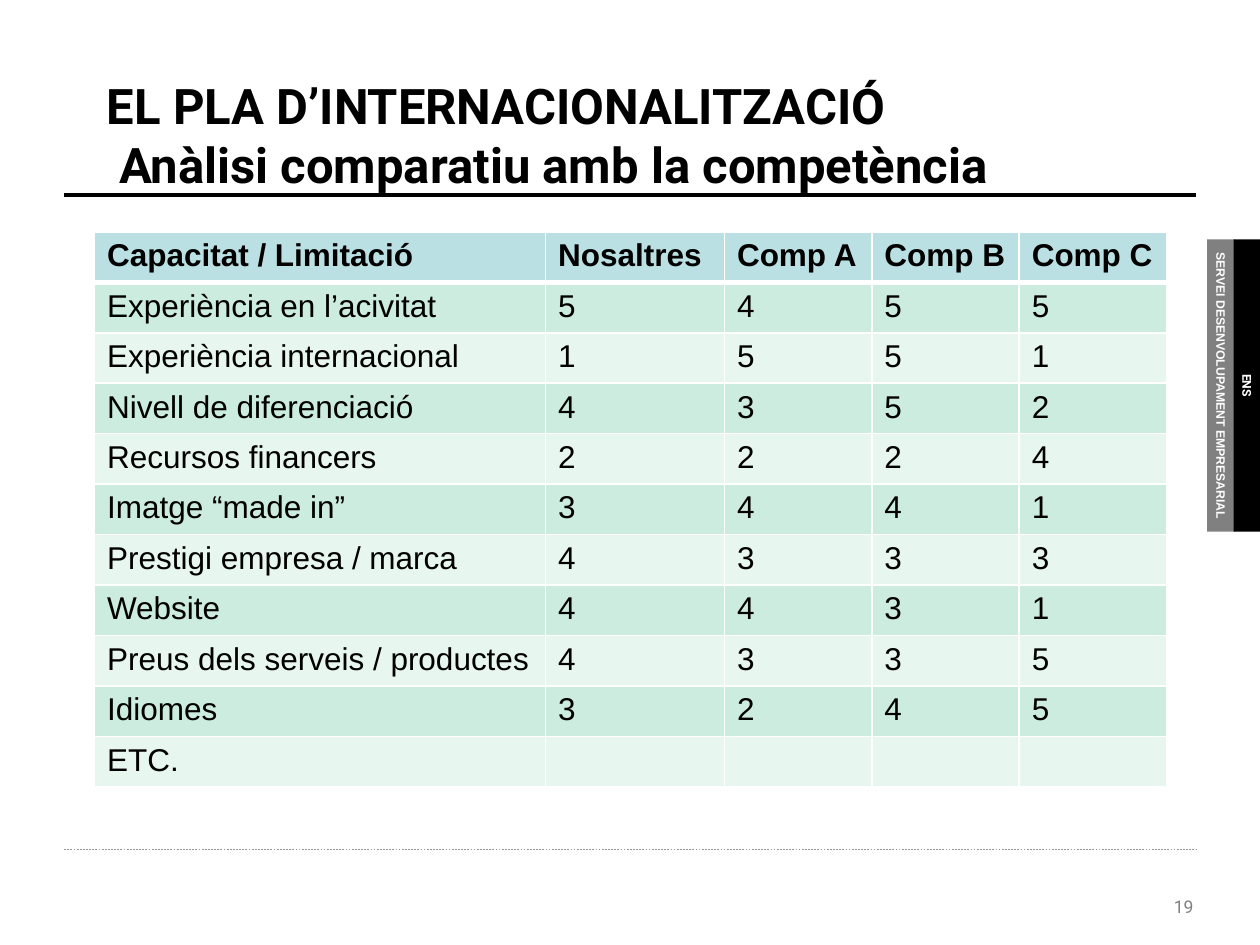
from lxml import etree
from pptx import Presentation
from pptx.dml.color import RGBColor
from pptx.enum import dml, shapes, text
from pptx.oxml import ns
from pptx.util import Inches, Pt

BLACK = RGBColor(0, 0, 0)
WHITE = RGBColor(255, 255, 255)
GREY = RGBColor(0x80, 0x80, 0x80)
SILVER = RGBColor(0x96, 0x96, 0x96)
BLUE = RGBColor(0xBB, 0xE0, 0xE3)
GREEN = RGBColor(0xCB, 0xEC, 0xDE)
PALE = RGBColor(0xE7, 0xF6, 0xEF)

TITLE = "EL PLA D’INTERNACIONALITZACIÓ\v Anàlisi comparatiu amb la competència"
PAGE = "19"
RULES = [(1.55, BLACK, 2.25, None), (6.74, SILVER, 0.25, dml.MSO_LINE.DASH)]
TABS = [
    ("SERVEI DESENVOLUPAMENT EMPRESARIAL", 8.53, GREY, "Arial", "TOP"),
    ("ENS", 8.74, BLACK, "Roboto", "MIDDLE"),
]
COLS = [3.58, 1.42, 1.17, 1.17, 1.17]
ROW = 0.38
ROWS = [
    ("Capacitat / Limitació", "Nosaltres", "Comp A", "Comp B", "Comp C"),
    ("Experiència en l’acivitat", "5", "4", "5", "5"),
    ("Experiència internacional", "1", "5", "5", "1"),
    ("Nivell de diferenciació", "4", "3", "5", "2"),
    ("Recursos financers", "2", "2", "2", "4"),
    ("Imatge “made in”", "3", "4", "4", "1"),
    ("Prestigi empresa / marca", "4", "3", "3", "3"),
    ("Website", "4", "4", "3", "1"),
    ("Preus dels serveis / productes", "4", "3", "3", "5"),
    ("Idiomes", "3", "2", "4", "5"),
    ("ETC.", "", "", "", ""),
]


def write(frame, words, size=18, font="Arial", color=BLACK, bold=False,
          align="LEFT", anchor="TOP"):
    frame.word_wrap = True
    frame.vertical_anchor = getattr(text.MSO_ANCHOR, anchor)
    para = frame.paragraphs[0]
    para.text = words
    para.alignment = getattr(text.PP_ALIGN, align)
    for run in para.runs:
        run.font.size = Pt(size)
        run.font.name = font
        run.font.bold = bold
        run.font.color.rgb = color


def edge(cell, side, width):
    props = cell._tc.get_or_add_tcPr()
    line = etree.SubElement(props, ns.qn("a:" + side), w=str(Pt(width)))
    fill = etree.SubElement(line, ns.qn("a:solidFill"))
    etree.SubElement(fill, ns.qn("a:srgbClr"), val=str(WHITE))


def rule(slide, y, color, width, dash):
    line = slide.shapes.add_connector(
        shapes.MSO_CONNECTOR.STRAIGHT,
        Inches(0.51), Inches(y), Inches(9.49), Inches(y))
    line.line.color.rgb = color
    line.line.width = Pt(width)
    if dash:
        line.line.dash_style = dash
    etree.SubElement(line._element.spPr, ns.qn("a:effectLst"))


def tab(slide, words, x, color, font, anchor):
    box = slide.shapes.add_shape(
        shapes.MSO_SHAPE.RECTANGLE,
        Inches(x), Inches(2.95), Inches(2.32), Inches(0.22))
    box.rotation = 90
    box.shadow.inherit = False
    box.fill.solid()
    box.fill.fore_color.rgb = color
    box.line.fill.background()
    write(box.text_frame, words, size=7, font=font, color=WHITE, bold=True,
          align="CENTER", anchor=anchor)


def grid(slide):
    table = slide.shapes.add_table(
        len(ROWS), len(COLS), Inches(0.75), Inches(1.84),
        Inches(sum(COLS)), Inches(ROW * len(ROWS))).table
    for col, width in zip(table.columns, COLS):
        col.width = Inches(width)
    for r, row in enumerate(ROWS):
        table.rows[r].height = Inches(ROW)
        for c, words in enumerate(row):
            cell = table.cell(r, c)
            write(cell.text_frame, words, bold=r == 0)
            edge(cell, "lnL", 1)
            edge(cell, "lnR", 1)
            edge(cell, "lnT", 3 if r == 1 else 1)
            edge(cell, "lnB", 3 if r == 0 else 1)
            cell.fill.solid()
            cell.fill.fore_color.rgb = BLUE if r == 0 else GREEN if r % 2 else PALE


def main():
    deck = Presentation()
    deck.slide_width, deck.slide_height = Inches(10), Inches(7.5)
    slide = deck.slides.add_slide(deck.slide_layouts[6])
    for item in RULES:
        rule(slide, *item)
    page = slide.shapes.add_textbox(
        Inches(7.84), Inches(7.06), Inches(1.73), Inches(0.27))
    write(page.text_frame, PAGE, size=10, font="Roboto", color=GREY, align="RIGHT")
    for item in TABS:
        tab(slide, *item)
    title = slide.shapes.add_textbox(
        Inches(0.75), Inches(0.44), Inches(8.5), Inches(1.25))
    write(title.text_frame, TITLE, size=28, font="Roboto", bold=True, anchor="MIDDLE")
    grid(slide)
    deck.save("out.pptx")


if __name__ == "__main__":
    main()
